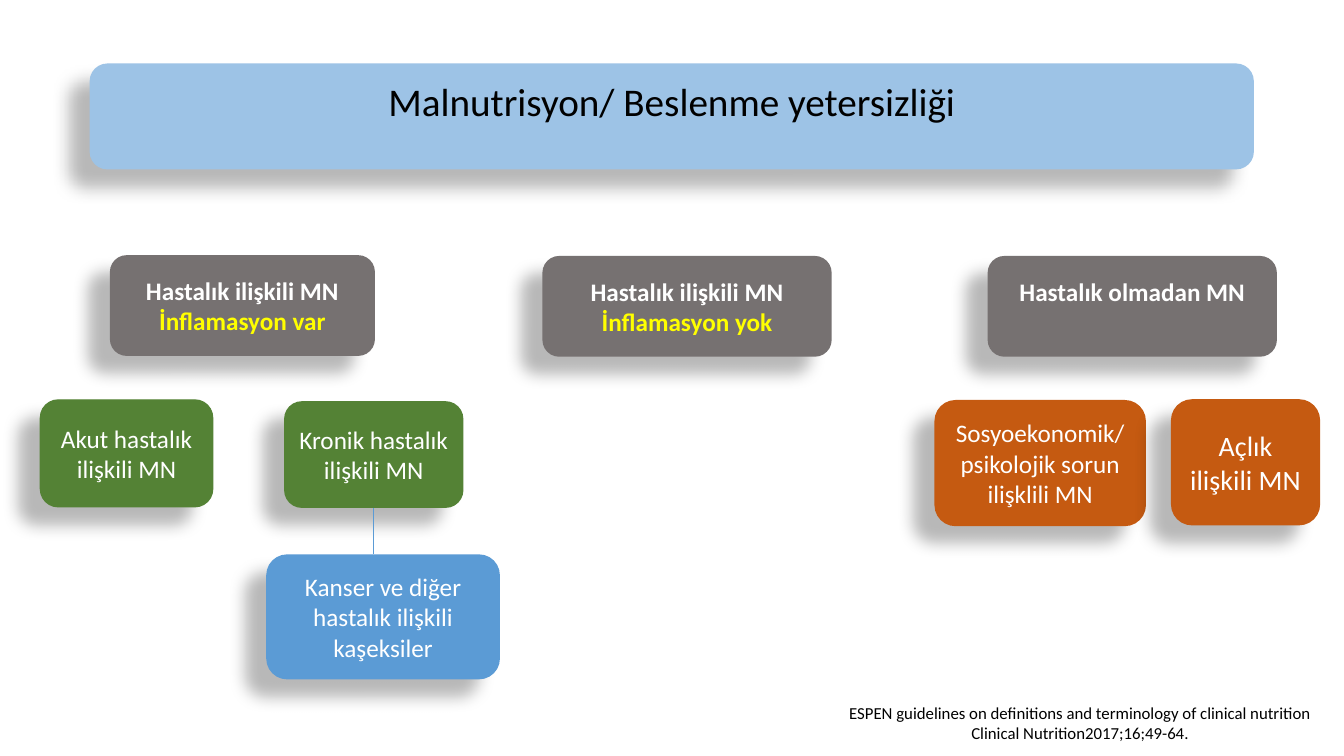
from lxml.etree import SubElement, Element
from pptx import Presentation
from pptx.dml.color import RGBColor
from pptx.enum.shapes import MSO_CONNECTOR, MSO_SHAPE
from pptx.enum.text import MSO_ANCHOR, PP_ALIGN
from pptx.oxml.ns import qn
from pptx.util import Cm, Pt

HUES = {"sky": "9DC3E6", "gray": "767171", "green": "548235", "blue": "5B9BD5",
        "rust": "C55A11", "white": "FFFFFF", "black": "000000",
        "yellow": "FFFF00", "glow": "4472C4"}
FONT = "Calibri"


def hue(name):
    return RGBColor.from_string(HUES[name])


def shade(effects, color, alpha, blur, dist, angle):
    """Add an outer shadow; alpha in percent, blur and dist in points."""
    outer = SubElement(effects, qn("a:outerShdw"), blurRad=str(Pt(blur)),
                       dist=str(Pt(dist)), dir=str(angle * 60000),
                       algn="tl", rotWithShape="0")
    tone = SubElement(outer, qn("a:srgbClr"), val=HUES[color])
    SubElement(tone, qn("a:alpha"), val=str(alpha * 1000))


def write(frame, lines, size, bold=False):
    """Fill a text frame with centred lines of (text, color)."""
    for i, (text, color) in enumerate(lines):
        para = frame.paragraphs[0] if i == 0 else frame.add_paragraph()
        para.alignment = PP_ALIGN.CENTER
        run = para.add_run()
        run.text = text
        for key, value in {"name": FONT, "size": Pt(size), "bold": bold}.items():
            setattr(run.font, key, value)
        run.font.color.rgb = hue(color)


def card(slide, box, fill, lines, size=18, bold=False, foot=0.13):
    """Draw a rounded box; foot is its bottom text margin in cm."""
    shape = slide.shapes.add_shape(MSO_SHAPE.ROUNDED_RECTANGLE, *map(Cm, box))
    shape.shadow.inherit = False
    shape.fill.solid()
    shape.fill.fore_color.rgb = hue(fill)
    shape.line.fill.background()
    shade(shape._element.spPr.find(qn("a:effectLst")), "black", 28, 11.8, 19.7, 141)
    frame = shape.text_frame
    style = {"word_wrap": True, "vertical_anchor": MSO_ANCHOR.MIDDLE,
             "margin_bottom": Cm(foot)}
    for key, value in style.items():
        setattr(frame, key, value)
    write(frame, lines, size, bold)
    return shape


def banner(slide, box, text):
    shape = card(slide, box, "sky", [(text, "black")], 28, foot=0.9)
    font = shape.text_frame.paragraphs[0].runs[0]._r.rPr
    effects = Element(qn("a:effectLst"))
    font.find(qn("a:solidFill")).addnext(effects)
    shade(effects, "glow", 60, 3, 2, 45)


def group(slide, box, title, note=None):
    lines = [(title, "white")]
    if note:
        lines.append((note, "yellow"))
    card(slide, box, "gray", lines, bold=True, foot=0.13 if note else 0.9)


def leaf(slide, box, fill, text, size=18):
    return card(slide, box, fill, [(text, "white")], size)


def chronic(slide, left, top):
    """Place the chronic disease box and the cachexia box below it."""
    upper = leaf(slide, (left, top, 4.52, 2.69), "green", "Kronik hastalık ilişkili MN")
    lower = leaf(slide, (left - 0.45, top + 3.86, 5.89, 3.15), "blue",
                 "Kanser ve diğer hastalık ilişkili kaşeksiler")
    mid = upper.left + upper.width // 2
    link = slide.shapes.add_connector(MSO_CONNECTOR.STRAIGHT, mid,
                                      upper.top + upper.height, mid, lower.top)
    link.begin_connect(upper, 2)
    link.line.color.rgb = hue("blue")
    link.line.width = Pt(0.5)
    SubElement(link._element.spPr, qn("a:effectLst"))


def cite(slide, box, lines):
    frame = slide.shapes.add_textbox(*map(Cm, box)).text_frame
    frame.word_wrap = False
    write(frame, [(line, "black") for line in lines], 12)


def main():
    deck = Presentation()
    deck.slide_width, deck.slide_height = Cm(33.87), Cm(19.05)
    slide = deck.slides.add_slide(deck.slide_layouts[6])

    banner(slide, (2.26, 1.6, 29.34, 2.67), "Malnutrisyon/ Beslenme yetersizliği")
    group(slide, (2.77, 6.43, 6.68, 2.54), "Hastalık ilişkili MN", "İnflamasyon var")
    group(slide, (13.67, 6.45, 7.29, 2.54), "Hastalık ilişkili MN", "İnflamasyon yok")
    group(slide, (24.89, 6.45, 7.29, 2.54), "Hastalık olmadan MN")

    acute = leaf(slide, (1.02, 10.08, 4.34, 2.69), "green", "Akut hastalık ilişkili MN")
    acute.line.color.rgb = hue("green")
    acute.line.width = Pt(1)
    chronic(slide, 7.16, 10.11)
    leaf(slide, (23.55, 10.08, 5.33, 3.18), "rust",
         "Sosyoekonomik/psikolojik sorun ilişklili MN")
    leaf(slide, (29.51, 10.06, 3.76, 3.18), "rust", "Açlık ilişkili MN", 20)

    cite(slide, (20.62, 17.58, 13.2, 1.42),
         ["ESPEN guidelines on definitions and terminology of clinical nutrition",
          "Clinical Nutrition2017;16;49-64."])
    deck.save("out.pptx")


if __name__ == "__main__":
    main()
